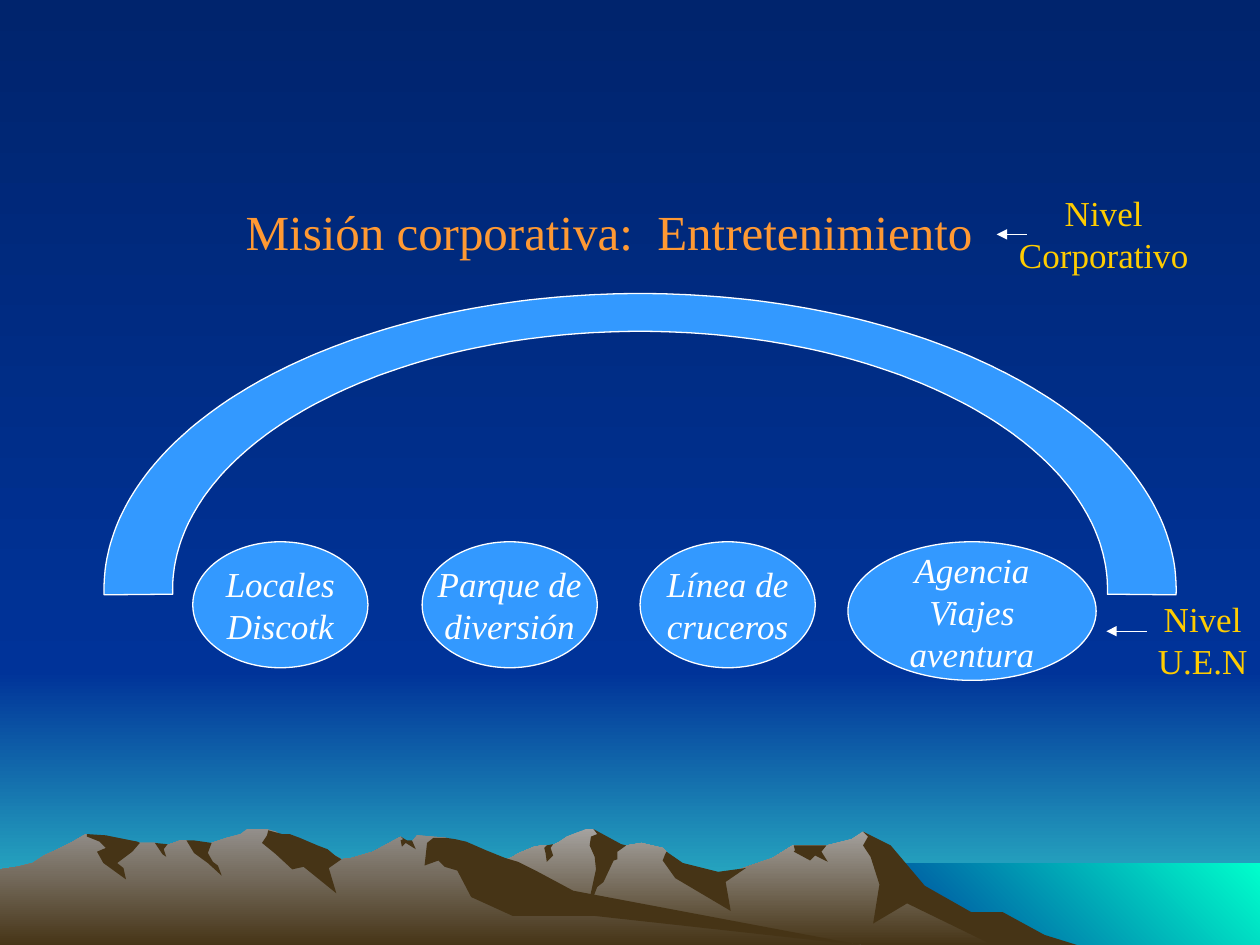
import math
from dataclasses import dataclass

from lxml import etree
from pptx import Presentation
from pptx import util as u
from pptx.dml.color import RGBColor
from pptx.enum import shapes, text
from pptx.oxml.ns import qn

# The slide is a grid of 1000 columns by 750 rows
COLS, ROWS = 1000, 750
CELL = u.Inches(10) // COLS
FINE = 10  # outline points are kept to a tenth of a cell


@dataclass(frozen=True)
class Theme:
    font: str = "Times New Roman"
    title_size: int = 28
    body_size: int = 20
    line_width: float = 0.75
    sky: tuple = ("00246D", "003399")
    horizon: tuple = ("003399", "33CCCC")
    sea: tuple = ("003399", "00FFCC")
    far_hill: tuple = ("A5A29F", "463416")
    near_hill: tuple = ("938F8B", "463416")
    rock: str = "463416"
    accent: str = "3399FF"
    white: str = "FFFFFF"
    title: str = "FF9933"
    label: str = "FFCC00"


THEME = Theme()

# Outlines as (column, row) points
FAR_HILLS = [
    (802, 740), (778, 727), (764, 723), (723, 698), (702, 671), (685, 660), (676, 666),
    (656, 671), (629, 671), (613, 681), (566, 697), (536, 690), (529, 676), (526, 673),
    (509, 669), (497, 671), (486, 673), (474, 661), (471, 658), (465, 658), (450, 664),
    (444, 668), (438, 671), (430, 671), (424, 672), (412, 677), (405, 681), (394, 685),
    (355, 698), (327, 709), (277, 739), (258, 750), (820, 750)]
FAR_SHADOWS = [
    [(796, 724), (771, 724), (734, 703), (707, 671), (685, 660), (689, 664), (685, 671),
     (691, 680), (698, 702), (693, 733), (720, 717), (792, 752), (858, 751), (829, 742)],
    [(471, 658), (474, 662), (469, 664), (468, 671), (472, 680), (473, 690), (465, 727),
     (474, 704), (479, 700), (487, 683), (490, 682), (490, 676), (497, 671), (493, 670)],
    [(529, 676), (528, 678), (526, 683), (536, 697), (580, 723), (576, 700), (592, 689),
     (570, 692), (542, 685)],
    [(650, 671), (630, 671), (631, 675), (630, 676), (643, 683), (647, 679), (657, 684),
     (652, 676), (656, 671)],
    [(433, 677), (432, 673), (434, 671), (439, 670), (437, 673), (439, 679), (434, 684)],
]
NEAR_HILLS = [
    (690, 751), (667, 748), (432, 712), (354, 665), (331, 663), (327, 668), (323, 668),
    (318, 664), (296, 676), (279, 681), (271, 682), (260, 676), (236, 681), (223, 663),
    (219, 660), (212, 658), (196, 658), (191, 662), (180, 665), (168, 669), (160, 671),
    (148, 667), (143, 667), (132, 671), (128, 671), (123, 669), (111, 669), (94, 671),
    (68, 662), (56, 669), (46, 674), (35, 679), (26, 685), (14, 688), (0, 690), (0, 751)]
NEAR_SHADOWS = [
    [(212, 663), (208, 669), (219, 678), (232, 690), (241, 688), (267, 709), (261, 689),
     (271, 682), (266, 679), (260, 674), (252, 671), (238, 665), (230, 662), (224, 662),
     (213, 659)],
    [(370, 668), (361, 666), (354, 665), (344, 665), (339, 669), (337, 687), (348, 683),
     (353, 688), (363, 691), (374, 712), (407, 727), (472, 727), (690, 751), (683, 750),
     (455, 707), (427, 692), (411, 684), (401, 681), (386, 675)],
    [(318, 667), (320, 666), (318, 664), (323, 667), (327, 667), (330, 674), (322, 669),
     (319, 672)],
    [(154, 667), (161, 668), (168, 669), (165, 677), (169, 684), (173, 687), (176, 695),
     (165, 685), (154, 677), (148, 667)],
    [(133, 670), (130, 674), (132, 680), (129, 678), (123, 669)],
    [(109, 668), (111, 669), (105, 676), (93, 685), (98, 689), (100, 698), (82, 685),
     (77, 676), (84, 673), (79, 668), (69, 664), (69, 662), (84, 663), (94, 665)],
]

# Business units: centre column, width, height, lines
UNITS = [
    (222.5, 139, 100, ("Locales", "Discotk")),
    (404.5, 139, 100, ("Parque de", "diversión")),
    (577.5, 139, 100, ("Línea de", "cruceros")),
    (771.5, 197, 110, ("Agencia", "Viajes", "aventura")),
]
UNIT_TOP = 430


def cells(*values):
    return [u.Emu(round(v * CELL)) for v in values]


def rgb(color):
    return RGBColor.from_string(color)


def paint(fill, color, angle=270):
    """Fill with one colour, or with a gradient when given a pair."""
    if isinstance(color, str):
        fill.solid()
        fill.fore_color.rgb = rgb(color)
        return
    fill.gradient()
    fill.gradient_angle = angle
    for stop, shade in zip(fill.gradient_stops, color):
        stop.color.rgb = rgb(shade)


def style(sp, color, outlined=False, angle=270):
    sp.shadow.inherit = False
    paint(sp.fill, color, angle)
    if outlined:
        sp.line.color.rgb = rgb(THEME.white)
        sp.line.width = u.Pt(THEME.line_width)
    else:
        sp.line.fill.background()


def add_outline(s, points, color, **fmt):
    first, *rest = [(round(x * FINE), round(y * FINE)) for x, y in points]
    builder = s.shapes.build_freeform(*first, scale=CELL / FINE)
    builder.add_line_segments(rest, close=True)
    style(builder.convert_to_shape(), color, **fmt)


def add_band(s, left, top, right, bottom, color, **fmt):
    corners = [(left, top), (right, top), (right, bottom), (left, bottom)]
    add_outline(s, corners, color, **fmt)


def write(tf, lines, size=THEME.body_size, color=THEME.white, italic=False):
    tf.word_wrap = False
    for i, line in enumerate(lines):
        p = tf.paragraphs[0] if i == 0 else tf.add_paragraph()
        p.alignment = text.PP_ALIGN.CENTER
        r = p.add_run()
        r.text = line
        r.font.name, r.font.size = THEME.font, u.Pt(size)
        r.font.color.rgb, r.font.italic = rgb(color), italic


def add_label(s, box, lines, **fmt):
    tf = s.shapes.add_textbox(*cells(*box)).text_frame
    write(tf, lines, **fmt)
    tf.auto_size = text.MSO_AUTO_SIZE.SHAPE_TO_FIT_TEXT


def add_unit(s, centre, width, height, lines):
    box = cells(centre - width / 2, UNIT_TOP, width, height)
    sp = s.shapes.add_shape(shapes.MSO_SHAPE.OVAL, *box)
    style(sp, THEME.accent, outlined=True)
    sp.text_frame.vertical_anchor = text.MSO_ANCHOR.MIDDLE
    write(sp.text_frame, lines, italic=True)


def add_arch(s, cx, cy, outer, inner, overlap=1):
    """Half ring between two ellipses, its feet a little below the centre."""
    def arc(radii, degrees):
        rx, ry = radii
        return [(cx + rx * math.cos(math.radians(d)), cy - ry * math.sin(math.radians(d)))
                for d in degrees]

    sweep = range(-overlap, 181 + overlap)
    points = arc(outer, sweep) + arc(inner, reversed(sweep))
    add_outline(s, points, THEME.accent, outlined=True)


def add_arrow(s, start, end, row):
    ends = cells(start, row, end, row)
    line = s.shapes.add_connector(shapes.MSO_CONNECTOR.STRAIGHT, *ends)
    line.line.color.rgb = rgb(THEME.white)
    line.line.width = u.Pt(THEME.line_width)
    etree.SubElement(line.line._get_or_add_ln(), qn("a:tailEnd"), type="triangle")
    etree.SubElement(line._element.spPr, qn("a:effectLst"))


def add_landscape(s):
    add_band(s, 0, 533, COLS, ROWS, THEME.horizon)
    add_band(s, 0, 0, COLS, 533, THEME.sky)
    add_band(s, 683, 685, COLS, 752, THEME.sea, angle=45)
    for hills, color, shadows in ((FAR_HILLS, THEME.far_hill, FAR_SHADOWS),
                                  (NEAR_HILLS, THEME.near_hill, NEAR_SHADOWS)):
        add_outline(s, hills, color)
        for shadow in shadows:
            add_outline(s, shadow, THEME.rock)


def main():
    prs = Presentation()
    prs.slide_width, prs.slide_height = cells(COLS, ROWS)
    s = prs.slides.add_slide(prs.slide_layouts[6])
    paint(s.background.fill, THEME.sky)
    add_landscape(s)

    # Arch over the business units
    add_arch(s, 508, 468, outer=(425.5, 235), inner=(371, 205))
    for unit in UNITS:
        add_unit(s, *unit)

    # Mission and level labels
    add_label(s, (185, 155, 597, 57), ["Misión corporativa:  Entretenimiento"],
              size=THEME.title_size, color=THEME.title)
    add_label(s, (796, 147, 160, 77), ["Nivel", "Corporativo"], color=THEME.label)
    add_label(s, (909, 469, 91, 77), ["Nivel", "U.E.N"], color=THEME.label)
    add_arrow(s, 815, 791, 186)
    add_arrow(s, 910, 878, 501)

    prs.save("out.pptx")


if __name__ == "__main__":
    main()
